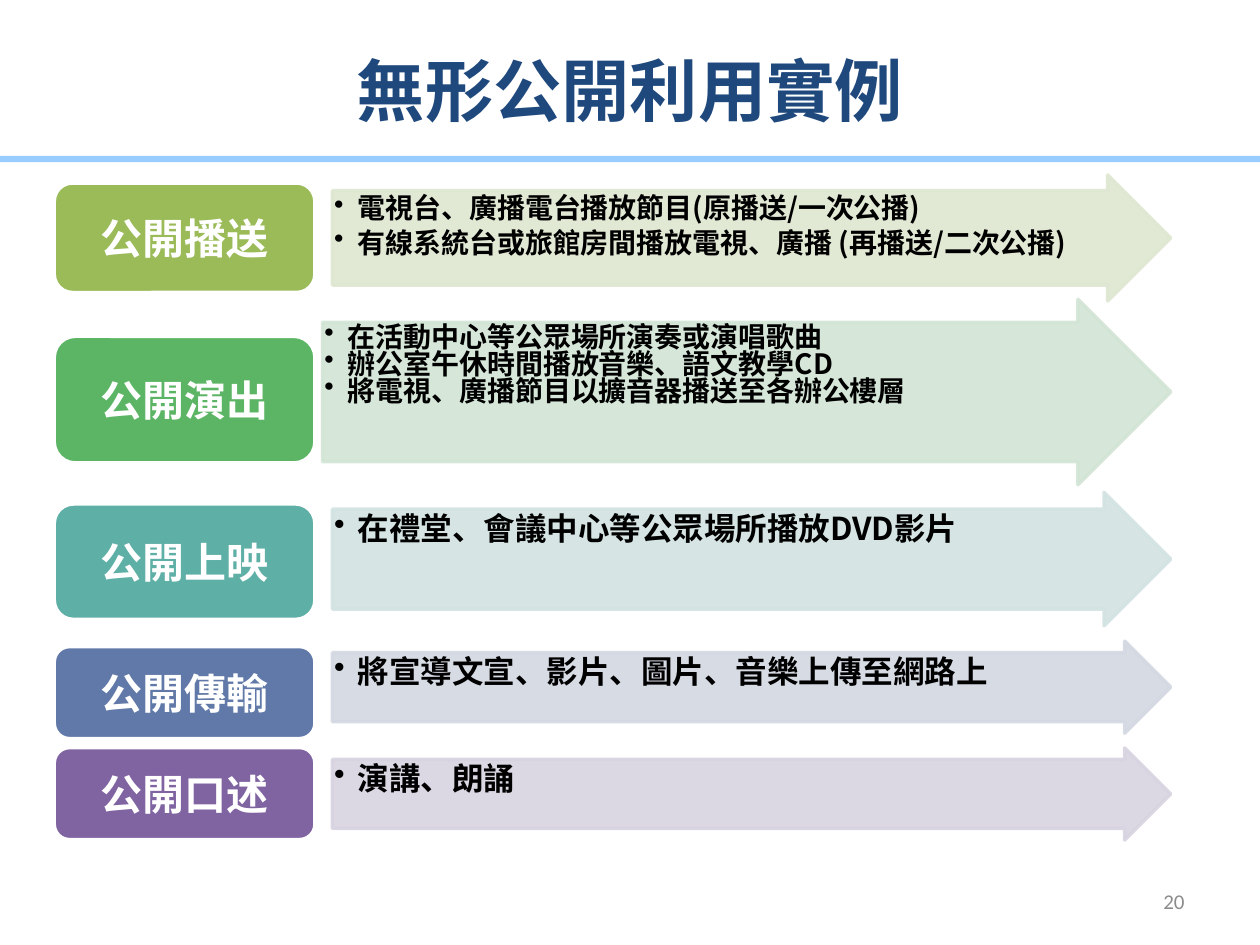
from dataclasses import dataclass

from lxml import etree
from pptx import Presentation
from pptx.dml.color import RGBColor
from pptx.enum.shapes import MSO_SHAPE
from pptx.enum.text import MSO_ANCHOR, PP_ALIGN
from pptx.oxml.ns import qn
from pptx.util import Pt

RECTANGLE = MSO_SHAPE.RECTANGLE
ROUNDED = MSO_SHAPE.ROUNDED_RECTANGLE
ARROW = MSO_SHAPE.RIGHT_ARROW
TOP, MIDDLE = MSO_ANCHOR.TOP, MSO_ANCHOR.MIDDLE
LEFT, CENTER, RIGHT = PP_ALIGN.LEFT, PP_ALIGN.CENTER, PP_ALIGN.RIGHT

CJK_FONT = "Noto Sans CJK SC"
LATIN_FONT = "Calibri"
COLORS = {
    "title": "1F497D", "rule": "99CCFF", "number": "8C8C8C",
    "white": "FFFFFF", "black": "000000",
    "broadcast": "9BBB59", "broadcast_arrow": "DEE7D1",
    "performance": "5CB565", "performance_arrow": "D2E5D5",
    "screening": "5EAFA6", "screening_arrow": "D2E3E2",
    "transmission": "6179A8", "transmission_arrow": "D3D8E2",
    "recitation": "8064A2", "recitation_arrow": "D8D3E0",
}
LABEL_LEFT, LABEL_WIDTH = 31, 149
ARROW_RIGHT = 669


@dataclass
class Category:
    """One kind of public use; vertical spans are (top, height) in points."""
    name: str
    color: str
    label_span: tuple
    arrow_left: float
    arrow_span: tuple
    size: float
    line_spacing: float
    space_after: float
    examples: list


CATEGORIES = [
    Category("公開播送", "broadcast", (104.6, 62.6), 190, (100, 72), 16, 17.3, 2.5,
             ["電視台、廣播電台播放節目(原播送/一次公播)",
              "有線系統台或旅館房間播放電視、廣播 (再播送/二次公播)"]),
    Category("公開演出", "performance", (192.2, 72.4), 184.3, (171, 106), 16, 15.4, 0,
             ["在活動中心等公眾場所演奏或演唱歌曲",
              "辦公室午休時間播放音樂、語文教學CD",
              "將電視、廣播節目以擴音器播送至各辦公樓層"]),
    Category("公開上映", "screening", (288, 66), 190, (281.4, 76.2), 18, 19.4, 0,
             ["在禮堂、會議中心等公眾場所播放DVD影片"]),
    Category("公開傳輸", "transmission", (369.5, 52.6), 190, (366.4, 52.6), 18, 19.4, 0,
             ["將宣導文宣、影片、圖片、音樂上傳至網路上"]),
    Category("公開口述", "recitation", (427.2, 52.6), 190, (427.4, 52.6), 18, 19.4, 0,
             ["演講、朗誦"]),
]


def rgb(name):
    """Return the palette colour with this name."""
    return RGBColor.from_string(COLORS[name])


def add_block(slide, kind, box, fill, line=None):
    """Add a filled preset shape with an optional 2 pt outline."""
    shape = slide.shapes.add_shape(kind, *map(Pt, box))
    shape.shadow.inherit = False
    shape.fill.solid()
    shape.fill.fore_color.rgb = rgb(fill)
    if line:
        shape.line.color.rgb = rgb(line)
        shape.line.width = Pt(2)
    else:
        shape.line.fill.background()
    return shape


def set_opacity(shape, percent):
    """Make the fill and outline of a shape partly transparent."""
    for color in shape._element.spPr.iter(qn("a:srgbClr")):
        etree.SubElement(color, qn("a:alpha"), val=str(percent * 1000))


def add_bullet(paragraph):
    """Give a paragraph a round bullet with a hanging indent."""
    properties = paragraph._p.get_or_add_pPr()
    properties.set("marL", str(Pt(13.5)))
    properties.set("indent", str(-Pt(13.5)))
    etree.SubElement(properties, qn("a:buChar"), char="•")


def write_text(shape, lines, size, color, align, anchor, line_spacing=None,
               space_after=0, font=CJK_FONT, bold=True, bullets=False):
    """Fill a shape with formatted paragraphs."""
    frame = shape.text_frame
    frame.word_wrap = True
    frame.vertical_anchor = anchor
    frame.text = "\n".join(lines)
    for paragraph in frame.paragraphs:
        if bullets:
            add_bullet(paragraph)
        paragraph.alignment = align
        paragraph.space_after = Pt(space_after)
        if line_spacing:
            paragraph.line_spacing = Pt(line_spacing)
        for run in paragraph.runs:
            run.font.name = font
            run.font.size = Pt(size)
            run.font.bold = bold
            run.font.color.rgb = rgb(color)
            etree.SubElement(run.font._element, qn("a:ea"), typeface=font)


def add_text(slide, box, text, size, color, align, anchor, **options):
    """Add a text box holding one paragraph."""
    shape = slide.shapes.add_textbox(*map(Pt, box))
    write_text(shape, [text], size, color, align, anchor, **options)


def add_category(slide, category):
    """Add the arrow of examples and the label of one category."""
    top, height = category.arrow_span
    left = category.arrow_left
    tint = category.color + "_arrow"
    arrow = add_block(slide, ARROW, (left, top, ARROW_RIGHT - left, height), tint, tint)
    arrow.adjustments[0] = 0.75
    arrow.adjustments[1] = 0.5
    set_opacity(arrow, 90)
    frame = arrow.text_frame
    frame.margin_left = frame.margin_right = frame.margin_bottom = Pt(1)
    frame.margin_top = Pt(2)
    write_text(arrow, category.examples, category.size, "black", LEFT, TOP,
               category.line_spacing, category.space_after, bullets=True)

    top, height = category.label_span
    label = add_block(slide, ROUNDED, (LABEL_LEFT, top, LABEL_WIDTH, height),
                      category.color, "white")
    write_text(label, [category.name], 24, "white", CENTER, MIDDLE, 29)


def main():
    """Build and save the slide."""
    presentation = Presentation()
    presentation.slide_width, presentation.slide_height = Pt(720), Pt(540)
    slide = presentation.slides.add_slide(presentation.slide_layouts[6])
    add_block(slide, RECTANGLE, (-3, 89, 724.5, 3.6), "rule")
    add_text(slide, (113, 21, 494, 62), "無形公開利用實例", 39, "title", CENTER, TOP,
             line_spacing=50)
    add_text(slide, (516, 500.5, 168, 28.8), "20", 12, "number", RIGHT, MIDDLE,
             font=LATIN_FONT, bold=False)
    for category in CATEGORIES:
        add_category(slide, category)
    presentation.save("out.pptx")


if __name__ == "__main__":
    main()
